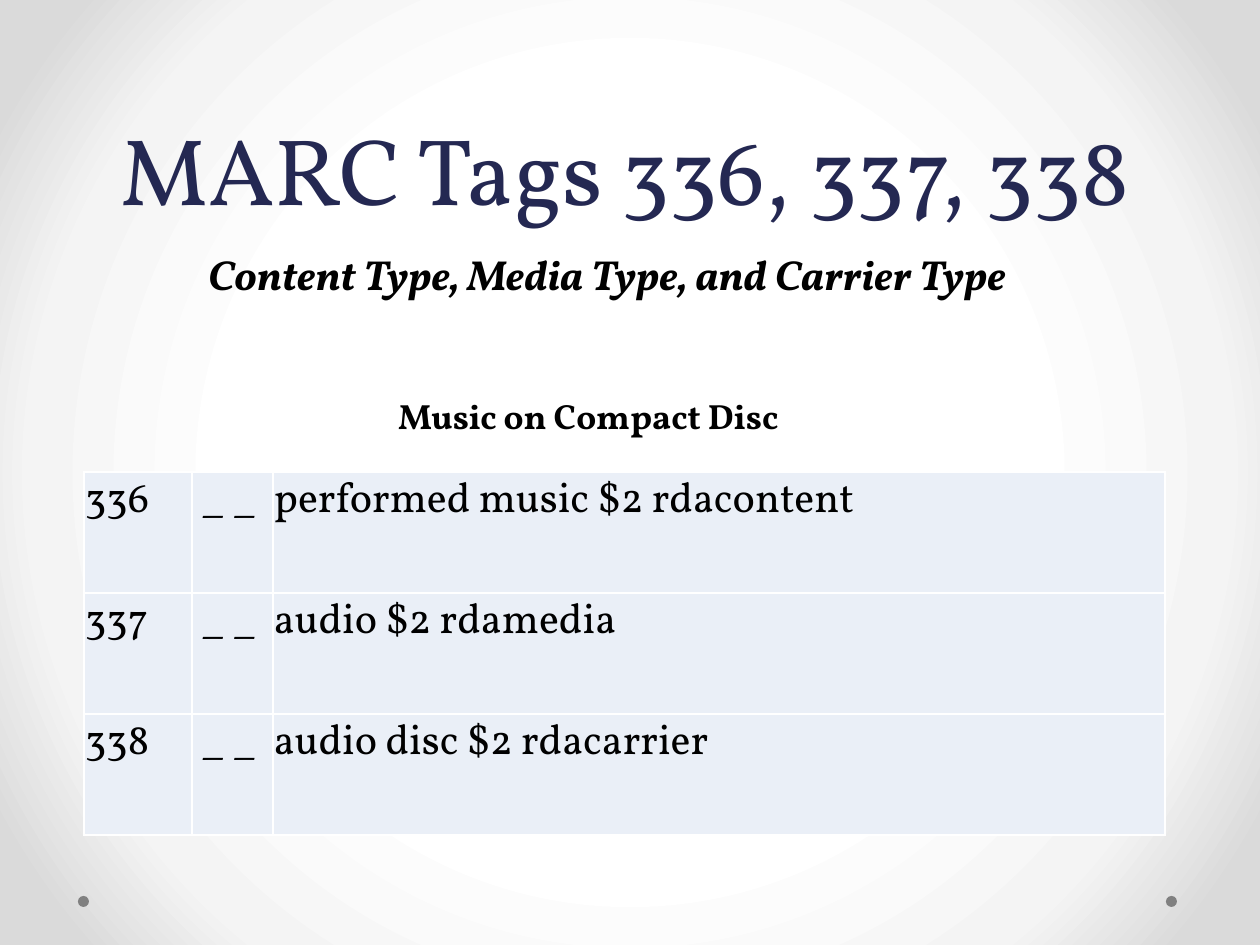
import pptx
import pptx.dml.color
import pptx.enum.shapes
import pptx.enum.text
import pptx.oxml
import pptx.oxml.ns
import pptx.util
from lxml import etree

NAVY = pptx.dml.color.RGBColor(0x24, 0x28, 0x52)
BLACK = pptx.dml.color.RGBColor(0x00, 0x00, 0x00)
WHITE = pptx.dml.color.RGBColor(0xFF, 0xFF, 0xFF)
GRAY = pptx.dml.color.RGBColor(0x80, 0x80, 0x80)
PALE_BLUE = pptx.dml.color.RGBColor(0xEA, 0xEF, 0xF7)
MIST = pptx.dml.color.RGBColor(0xF4, 0xF4, 0xF4)
SILVER = pptx.dml.color.RGBColor(0xDA, 0xDA, 0xDA)

FONT = "Vollkorn"
CENTER = pptx.enum.text.PP_ALIGN.CENTER
BACKDROP_STOPS = ((50, WHITE), (76, MIST), (92, SILVER))
COLUMN_WIDTHS = (108, 81, 892)
ROW_HEIGHT = 121
FIELDS = (
    ("336", "performed music $2 rdacontent"),
    ("337", "audio $2 rdamedia"),
    ("338", "audio disc $2 rdacarrier"),
)
INDICATORS = " _ _"


def px(length):
    """Turn a length in px into EMU."""
    return pptx.util.Emu(round(length * 914400 / 126))


def apply(target, formats):
    """Set each named format value on the target."""
    for name, value in formats.items():
        setattr(target, name, value)


def add_node(parent, tag, **attributes):
    """Append a DrawingML element and return it."""
    return etree.SubElement(parent, pptx.oxml.ns.qn(tag), attributes)


def write(frame, text, size, color=BLACK, align=None, **formats):
    """Write one formatted paragraph into a text frame and return it."""
    para = frame.paragraphs[0]
    para.alignment = align
    span = para.add_run()
    span.text = text
    apply(span.font, {"name": FONT, "size": pptx.util.Pt(size), **formats})
    span.font.color.rgb = color
    return para


def paint_backdrop(page):
    """Fill the page with a radial gradient."""
    page.background.fill.gradient()
    gradient = next(page.element.iter(pptx.oxml.ns.qn("a:gradFill")))
    for child in list(gradient):
        gradient.remove(child)
    stops = add_node(gradient, "a:gsLst")
    for percent, color in BACKDROP_STOPS:
        stop = add_node(stops, "a:gs", pos=str(percent * 1000))
        add_node(stop, "a:srgbClr", val=str(color))
    circle = add_node(gradient, "a:path", path="circle")
    add_node(circle, "a:fillToRect", **dict.fromkeys("ltrb", "50000"))


def add_dot(page, left):
    """Add a small gray dot near the foot of the page."""
    dot = page.shapes.add_shape(
        pptx.enum.shapes.MSO_SHAPE.OVAL, px(left), px(896), px(11), px(11))
    dot.shadow.inherit = False
    dot.fill.solid()
    dot.fill.fore_color.rgb = GRAY
    dot.line.fill.background()


def set_title(page, text):
    """Place and format the title placeholder."""
    title = page.shapes.title
    apply(title, {"left": px(63), "top": px(73),
                  "width": px(1124), "height": px(158)})
    apply(title.text_frame, {
        "word_wrap": True,
        "auto_size": pptx.enum.text.MSO_AUTO_SIZE.NONE,
        "vertical_anchor": pptx.enum.text.MSO_ANCHOR.BOTTOM,
    })
    para = write(title.text_frame, text, 54, NAVY, CENTER)
    para.line_spacing = pptx.util.Pt(58)


def add_heading(page, bounds, text, size, **formats):
    """Add a centred bold heading."""
    box = page.shapes.add_textbox(*map(px, bounds))
    apply(box.text_frame, {
        "word_wrap": True,
        "auto_size": pptx.enum.text.MSO_AUTO_SIZE.SHAPE_TO_FIT_TEXT,
    })
    write(box.text_frame, text, size, align=CENTER, bold=True, **formats)


def format_cell(cell, text):
    """Write a table cell with thin white borders and a pale fill."""
    margins = ("margin_left", "margin_top", "margin_right", "margin_bottom")
    apply(cell, dict.fromkeys(margins, px(1)))
    write(cell.text_frame, text, 24)
    properties = cell._tc.get_or_add_tcPr()
    for side in ("a:lnL", "a:lnR", "a:lnT", "a:lnB"):
        border = add_node(properties, side, w=str(pptx.util.Pt(1)))
        fill = add_node(border, "a:solidFill")
        add_node(fill, "a:srgbClr", val=str(WHITE))
    cell.fill.solid()
    cell.fill.fore_color.rgb = PALE_BLUE


def add_field_table(page):
    """Add the table of tags, indicators and values."""
    table = page.shapes.add_table(
        len(FIELDS), len(COLUMN_WIDTHS), px(84), px(472),
        px(sum(COLUMN_WIDTHS)), px(ROW_HEIGHT * len(FIELDS))).table
    apply(table, {"first_row": False, "horz_banding": False})
    for column, width in zip(table.columns, COLUMN_WIDTHS):
        column.width = px(width)
    for row, (tag, value) in zip(table.rows, FIELDS):
        row.height = px(ROW_HEIGHT)
        for cell, text in zip(row.cells, (tag, INDICATORS, value)):
            format_cell(cell, text)


def main():
    """Build the slide and save the deck."""
    deck = pptx.Presentation()
    apply(deck, {"slide_width": px(1260), "slide_height": px(945)})
    page = deck.slides.add_slide(deck.slide_layouts.get_by_name("Title Only"))
    paint_backdrop(page)
    for left in (1166, 78):
        add_dot(page, left)
    set_title(page, "MARC Tags 336, 337, 338")
    add_heading(page, (164, 242, 886, 63),
                "Content Type, Media Type, and Carrier Type", 24, italic=True)
    add_heading(page, (368, 388, 441, 55), "Music on Compact Disc", 20)
    add_field_table(page)
    deck.save("out.pptx")


if __name__ == "__main__":
    main()
